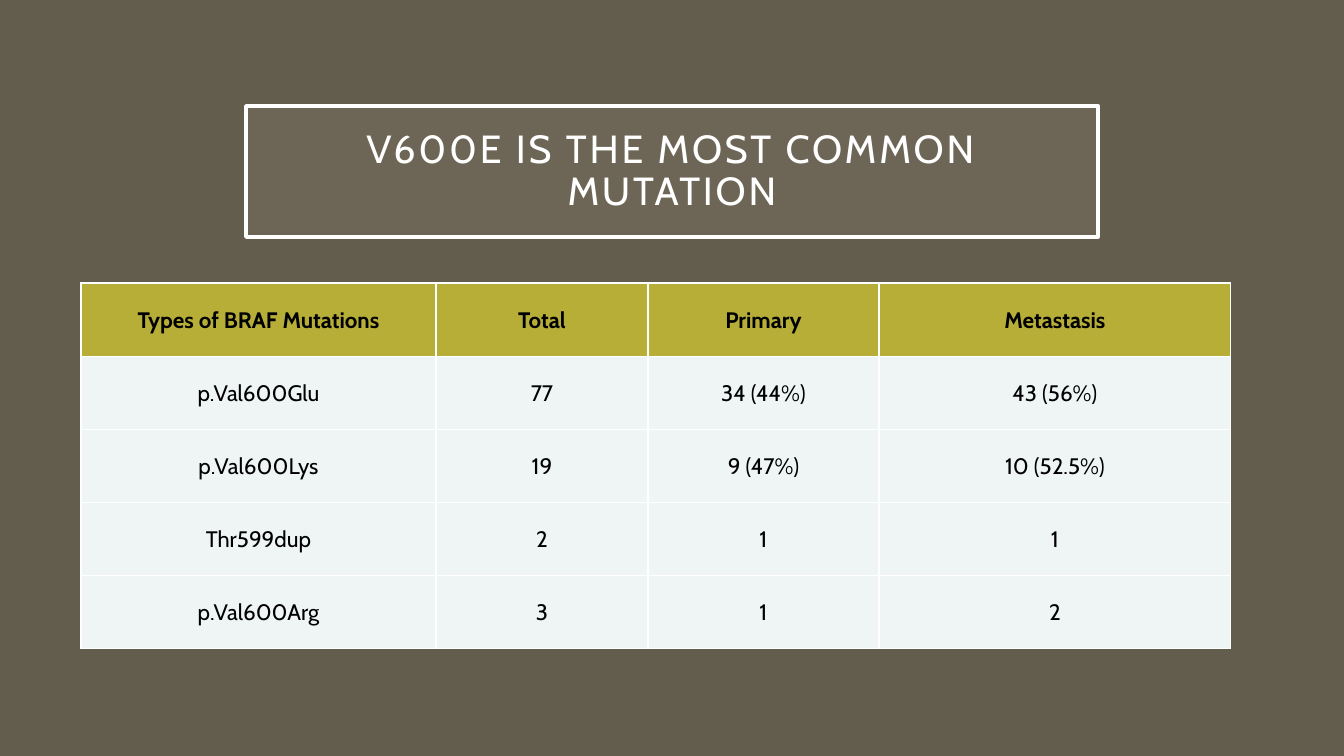
"""Builds a slide with a boxed title over a table of BRAF mutation counts."""
import pptx
import pptx.dml.color
import pptx.enum.text
import pptx.oxml.ns
import pptx.util
from lxml import etree


class Theme:
    font = "Cabin"
    page = "635D4D"
    box = "A7A08E"
    white = "FFFFFF"
    head = "B7AE38"
    body = "EFF4F4"
    ink = "000000"
    title_size = 28
    cell_size = 16


def paint(fill, color):
    fill.solid()
    fill.fore_color.rgb = pptx.dml.color.RGBColor.from_string(color)


def write(frame, text, size, color, bold=False):
    para = frame.paragraphs[0]
    para.alignment = pptx.enum.text.PP_ALIGN.CENTER
    run = para.add_run()
    run.text = text
    run.font.name = Theme.font
    run.font.size = pptx.util.Pt(size)
    run.font.bold = bold
    paint(run.font.fill, color)
    return para, run


qn = pptx.oxml.ns.qn
px = 914400 / 100.8
middle = pptx.enum.text.MSO_ANCHOR.MIDDLE

deck = pptx.Presentation()
deck.slide_width = round(1344 * px)
deck.slide_height = round(756 * px)
slide = deck.slides.add_slide(deck.slide_layouts[5])
paint(slide.background.fill, Theme.page)

title = slide.shapes.title
title.left, title.top, title.width, title.height = [
    round(n * px) for n in (246, 106, 852, 131)]
paint(title.fill, Theme.box)
tint = title.fill._xPr.find(qn("a:solidFill"))[0]
etree.SubElement(tint, qn("a:alpha"), val="15000")
paint(title.line.fill, Theme.white)
title.line.width = pptx.util.Pt(2.5)
frame = title.text_frame
frame.word_wrap = True
frame.auto_size = pptx.enum.text.MSO_AUTO_SIZE.NONE
frame.vertical_anchor = middle
frame.margin_left = frame.margin_right = round(20 * px)
frame.margin_top = frame.margin_bottom = round(20 * px)
para, run = write(frame, "V600E IS THE MOST COMMON MUTATION",
                  Theme.title_size, Theme.white)
para.line_spacing = 0.9
run.font._element.set("spc", "200")

rows = [
    ("Types of BRAF Mutations", "Total", "Primary", "Metastasis"),
    ("p.Val600Glu", "77", "34 (44%)", "43 (56%)"),
    ("p.Val600Lys", "19", "9 (47%)", "10 (52.5%)"),
    ("Thr599dup", "2", "1", "1"),
    ("p.Val600Arg", "3", "1", "2"),
]
widths = (355, 212, 231, 352)
table = slide.shapes.add_table(
    len(rows), len(widths),
    *[round(n * px) for n in (81, 283, sum(widths), 366)]).table
for col, width in zip(table.columns, widths):
    col.width = round(width * px)

for r, row in enumerate(rows):
    for c, text in enumerate(row):
        cell = table.cell(r, c)
        cell.vertical_anchor = middle
        cell.margin_left = cell.margin_right = cell.margin_top = round(px)
        cell.margin_bottom = 0
        props = cell._tc.get_or_add_tcPr()
        for side in ("lnL", "lnR", "lnT", "lnB"):
            line = etree.SubElement(props, qn("a:" + side),
                                    w=str(pptx.util.Pt(1)))
            solid = etree.SubElement(line, qn("a:solidFill"))
            etree.SubElement(solid, qn("a:srgbClr"), val=Theme.white)
        paint(cell.fill, Theme.body if r else Theme.head)
        write(cell.text_frame, text, Theme.cell_size, Theme.ink, r == 0)

deck.save("out.pptx")
